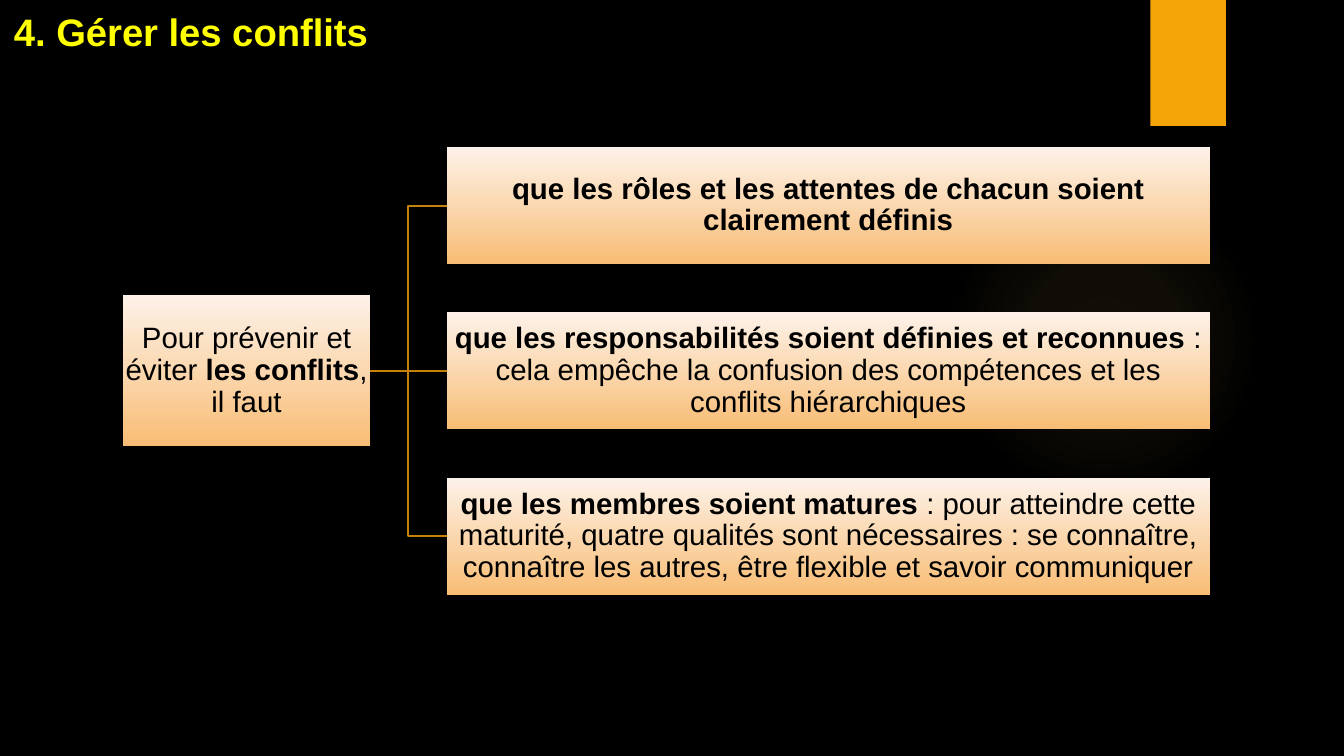
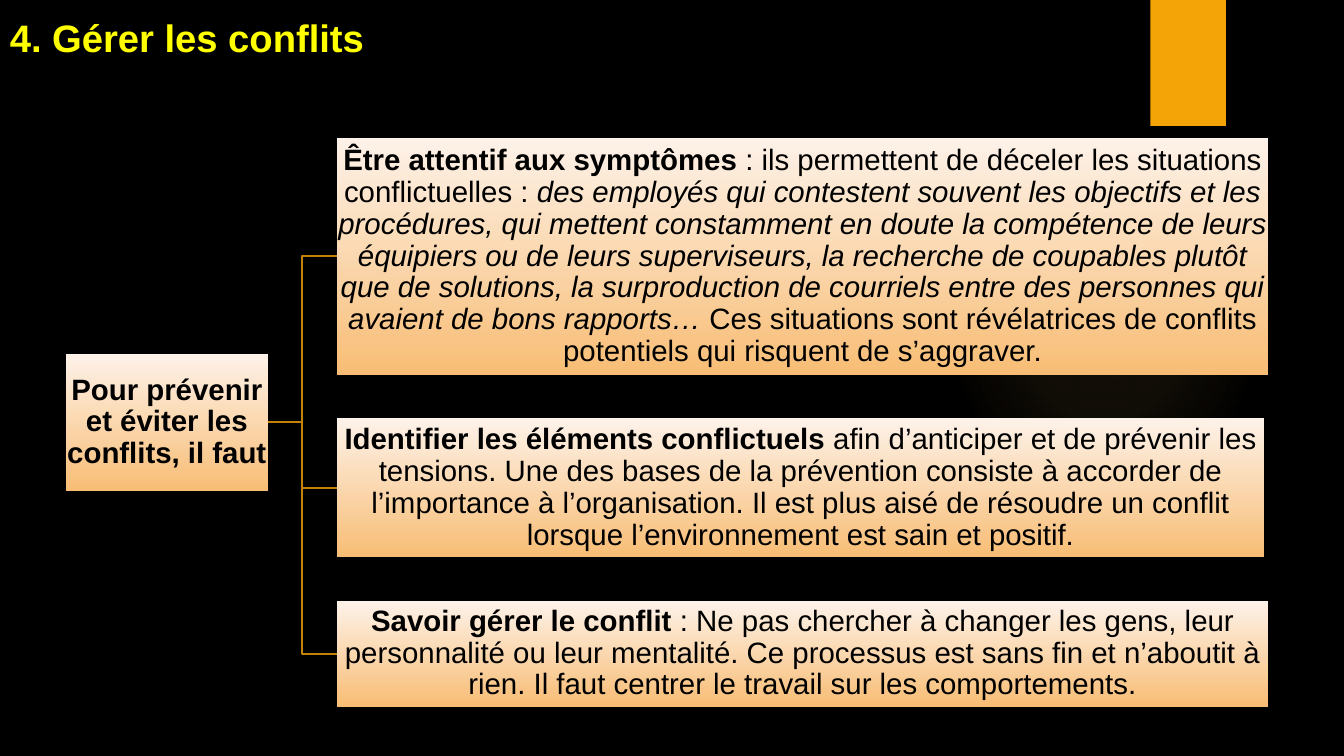
"""Build two slides on preventing conflicts, each a tree of one cause and three advices."""
from lxml.etree import SubElement
from pptx import Presentation
from pptx.dml.color import RGBColor
from pptx.enum.shapes import MSO_CONNECTOR, MSO_SHAPE
from pptx.enum.text import MSO_ANCHOR, PP_ALIGN
from pptx.oxml import parse_xml
from pptx.oxml.ns import nsdecls, qn
from pptx.util import Inches, Pt

COLORS = {
    "background": "000000",
    "glow": "FAC96A",
    "band": "F5A408",
    "title": "FFFF00",
    "text": "000000",
    "box_top": "FDF2E9",
    "box_bottom": "F8BD75",
    "branch": "C48306",
}
FONT = "Arial"
TITLE = "4. Gérer les conflits"
RIGHT_SIDE, LEFT_SIDE = 3, 1
GLOW_STOPS = [(0, 7), (36, 6), (69, 0)]

TREES = [
    {
        "title_at": (0.04, 0),
        "root": (1.22, 2.45, 1.5),
        "root_text": [("Pour prévenir et éviter ", ""), ("les conflits", "b"), (", il faut", "")],
        "left": 4.43,
        "top": 1.46,
        "gap": 0.48,
        "advices": [
            (7.57, 1.16, [
                ("que les rôles et les attentes de chacun soient clairement définis", "b"),
            ]),
            (7.57, 1.16, [
                ("que les responsabilités soient définies et reconnues", "b"),
                (" : cela empêche la confusion des compétences et les conflits hiérarchiques", ""),
            ]),
            (7.57, 1.16, [
                ("que les membres soient matures", "b"),
                (" : pour atteindre cette maturité, quatre qualités sont nécessaires : "
                 "se connaître, connaître les autres, être flexible et savoir communiquer", ""),
            ]),
        ],
    },
    {
        "title_at": (0, 0.06),
        "root": (0.65, 2.01, 1.36),
        "root_text": [("Pour prévenir et éviter les conflits, il faut", "b")],
        "left": 3.34,
        "top": 1.37,
        "gap": 0.43,
        "advices": [
            (9.24, 2.35, [
                ("Être attentif aux symptômes", "b"),
                (" : ils permettent de déceler les situations conflictuelles : ", ""),
                ("des employés qui contestent souvent les objectifs et les procédures, "
                 "qui mettent constamment en doute la compétence de leurs équipiers ou de "
                 "leurs superviseurs, la recherche de coupables plutôt que de solutions, "
                 "la surproduction de courriels entre des personnes qui avaient de bons "
                 "rapports… ", "i"),
                ("Ces situations sont révélatrices de conflits potentiels qui risquent "
                 "de s’aggraver.", ""),
            ]),
            (9.2, 1.38, [
                ("Identifier les éléments conflictuels", "b"),
                (" afin d’anticiper et de prévenir les tensions. Une des bases de la "
                 "prévention consiste à accorder de l’importance à l’organisation. Il est "
                 "plus aisé de résoudre un conflit lorsque l’environnement est sain et "
                 "positif.", ""),
            ]),
            (9.24, 1.05, [
                ("Savoir gérer le conflit ", "b"),
                (": Ne pas chercher à changer les gens, leur personnalité ou leur "
                 "mentalité. Ce processus est sans fin et n’aboutit à rien. Il faut "
                 "centrer le travail sur les comportements.", ""),
            ]),
        ],
    },
]


def write(shape, runs, size=21, color="text", align=PP_ALIGN.CENTER,
          anchor=MSO_ANCHOR.MIDDLE, inset=0.01, spacing=0.9):
    frame = shape.text_frame
    frame.word_wrap = True
    frame.vertical_anchor = anchor
    if inset is not None:
        frame.margin_left = frame.margin_right = Inches(inset)
        frame.margin_top = frame.margin_bottom = Inches(inset)
    paragraph = frame.paragraphs[0]
    paragraph.alignment = align
    paragraph.line_spacing = spacing
    for text, style in runs:
        run = paragraph.add_run()
        run.text = text
        run.font.name = FONT
        run.font.size = Pt(size)
        run.font.bold = style == "b"
        run.font.italic = style == "i"
        run.font.color.rgb = RGBColor.from_string(COLORS[color])


def add_box(slide, left, top, width, height, runs):
    box = slide.shapes.add_shape(
        MSO_SHAPE.RECTANGLE, Inches(left), Inches(top), Inches(width), Inches(height))
    box.shadow.inherit = False
    box.line.fill.background()
    box.fill.gradient()
    box.fill.gradient_angle = 270
    for stop, name in zip(box.fill.gradient_stops, ("box_top", "box_bottom")):
        stop.color.rgb = RGBColor.from_string(COLORS[name])
    write(box, runs)
    return box


prs = Presentation()
prs.slide_width, prs.slide_height = Inches(13.33), Inches(7.5)
master_fill = prs.slide_master.background.fill
master_fill.solid()
master_fill.fore_color.rgb = RGBColor.from_string(COLORS["background"])

for tree in TREES:
    slide = prs.slides.add_slide(prs.slide_layouts[6])

    glow = slide.shapes.add_shape(
        MSO_SHAPE.OVAL, Inches(9.41), Inches(1.83), Inches(3.08), Inches(3.08))
    glow.shadow.inherit = False
    glow.line.fill.background()
    glow.fill.background()
    stops = "".join(
        f'<a:gs pos="{position * 1000}"><a:srgbClr val="{COLORS["glow"]}">'
        f'<a:alpha val="{alpha * 1000}"/></a:srgbClr></a:gs>'
        for position, alpha in GLOW_STOPS)
    radial_fill = parse_xml(
        f'<a:gradFill {nsdecls("a")}><a:gsLst>{stops}</a:gsLst><a:path path="circle">'
        '<a:fillToRect l="50000" t="50000" r="50000" b="50000"/></a:path></a:gradFill>')
    glow_properties = glow.element.spPr
    glow_properties.replace(glow_properties.find(qn("a:noFill")), radial_fill)

    band = slide.shapes.add_shape(
        MSO_SHAPE.RECTANGLE, Inches(11.41), 0, Inches(0.75), Inches(1.25))
    band.shadow.inherit = False
    band.line.fill.background()
    band.fill.solid()
    band.fill.fore_color.rgb = RGBColor.from_string(COLORS["band"])

    title_left, title_top = tree["title_at"]
    title = slide.shapes.add_textbox(
        Inches(title_left), Inches(title_top), Inches(13.14), Inches(0.59))
    write(title, [(TITLE, "b")], size=27.3, color="title", align=PP_ALIGN.LEFT,
          anchor=MSO_ANCHOR.BOTTOM, inset=None, spacing=1.0)

    advices, gap = tree["advices"], tree["gap"]
    stack_height = sum(height for _, height, _ in advices) + gap * (len(advices) - 1)
    root_left, root_width, root_height = tree["root"]
    root_top = tree["top"] + (stack_height - root_height) / 2
    root = add_box(slide, root_left, root_top, root_width, root_height, tree["root_text"])

    top = tree["top"]
    for width, height, runs in advices:
        advice = add_box(slide, tree["left"], top, width, height, runs)
        branch = slide.shapes.add_connector(MSO_CONNECTOR.ELBOW, 0, 0, 0, 0)
        branch.begin_connect(root, RIGHT_SIDE)
        branch.end_connect(advice, LEFT_SIDE)
        branch.line.color.rgb = RGBColor.from_string(COLORS["branch"])
        branch.line.width = Pt(1.5)
        SubElement(branch.element.spPr, qn("a:effectLst"))
        top += height + gap

prs.save("out.pptx")
